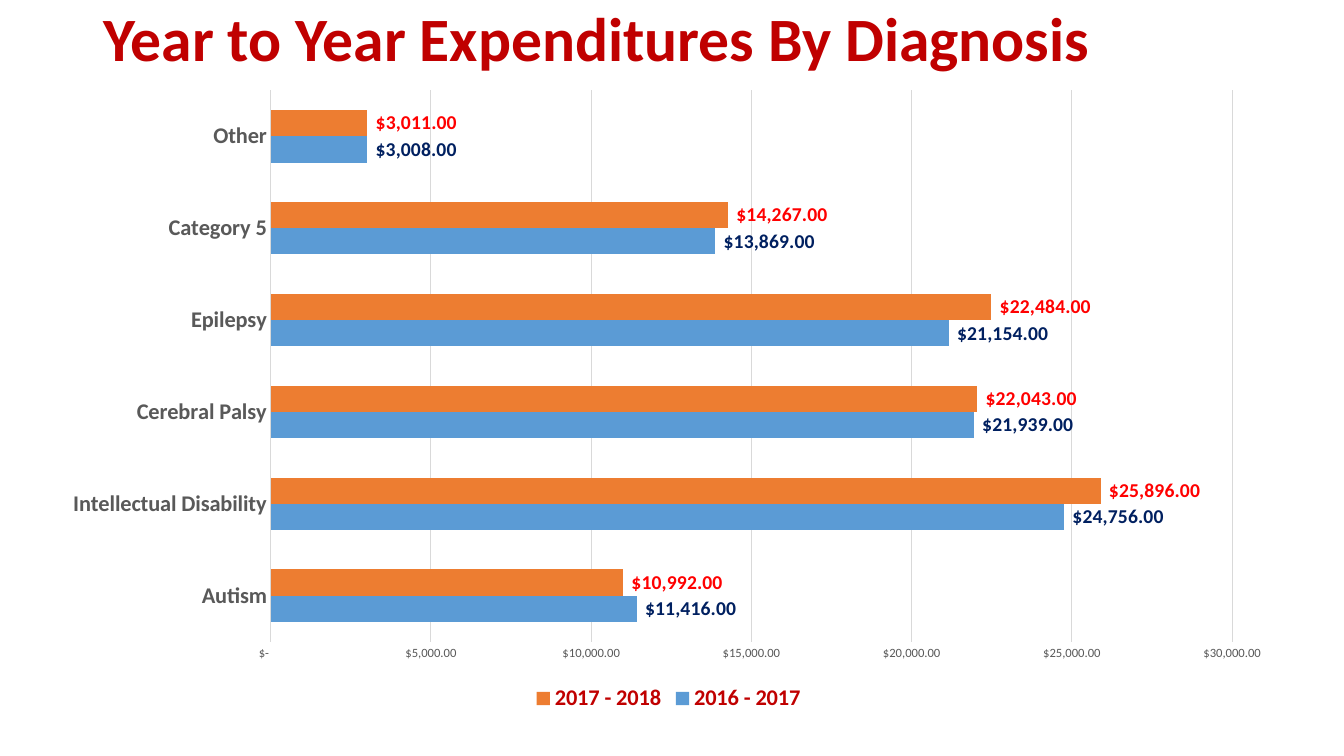
"""Build a slide with a bar chart of yearly expenditures by diagnosis."""
from dataclasses import dataclass

from pptx import Presentation
from pptx.chart.data import CategoryChartData
from pptx.dml.color import RGBColor
from pptx.enum.chart import (XL_CHART_TYPE, XL_LABEL_POSITION,
                             XL_LEGEND_POSITION, XL_TICK_MARK)
from pptx.enum.text import MSO_ANCHOR
from pptx.util import Inches, Pt

BARS = XL_CHART_TYPE.BAR_CLUSTERED
OUTSIDE = XL_LABEL_POSITION.OUTSIDE_END
BOTTOM = XL_LEGEND_POSITION.BOTTOM
NO_TICK = XL_TICK_MARK.NONE
MIDDLE = MSO_ANCHOR.MIDDLE


@dataclass(frozen=True)
class Theme:
    face: str = "Calibri"
    red: str = "C00000"
    gray: str = "595959"
    grid: str = "D9D9D9"
    black: str = "000000"
    title: int = 44
    large: int = 16
    label: int = 14
    base: int = 10
    small: int = 9
    fills: tuple = ("5B9BD5", "ED7D31")
    inks: tuple = ("002060", "FF0000")


theme = Theme()
MONEY = r'_("$"* #,##0.00_);_("$"* \(#,##0.00\);_("$"* "-"??_);_(@_)'


def style(font, size, color, bold=True):
    font.name = theme.face
    font.size = Pt(size)
    font.bold = bold
    font.color.rgb = RGBColor.from_string(color)


deck = Presentation()
deck.slide_width = Inches(13.33)
deck.slide_height = Inches(7.5)
slide = deck.slides.add_slide(deck.slide_layouts[6])

title = slide.shapes.add_textbox(Inches(0.93), Inches(0), Inches(11.5), Inches(0.83))
frame = title.text_frame
frame.word_wrap = True
frame.vertical_anchor = MIDDLE
frame.text = "Year to Year Expenditures By Diagnosis"
heading = frame.paragraphs[0]
heading.line_spacing = 0.9
style(heading.runs[0].font, theme.title, theme.red)

data = CategoryChartData(number_format=MONEY)
data.categories = ["Autism", "Intellectual Disability", "Cerebral Palsy",
                   "Epilepsy", "Category 5", "Other"]
data.add_series("2016 - 2017", [11416, 24756, 21939, 21154, 13869, 3008])
data.add_series("2017 - 2018", [10992, 25896, 22043, 22484, 14267, 3011])

chart = slide.shapes.add_chart(BARS, Inches(0.48), Inches(0.77),
                               Inches(12.3), Inches(6.34), data).chart
style(chart.font, theme.base, theme.black, False)
chart.has_title = False
chart.has_legend = True
chart.legend.position = BOTTOM
chart.legend.include_in_layout = False
style(chart.legend.font, theme.large, theme.red)

names, values = chart.category_axis, chart.value_axis
for axis in (names, values):
    axis.major_tick_mark = NO_TICK
    axis.minor_tick_mark = NO_TICK
    axis.format.line.fill.background()
style(names.tick_labels.font, theme.large, theme.gray)
style(values.tick_labels.font, theme.small, theme.gray, False)
values.tick_labels.number_format = MONEY
values.tick_labels.number_format_is_linked = False
values.has_major_gridlines = True
grid = values.major_gridlines.format.line
grid.width = Pt(0.75)
grid.color.rgb = RGBColor.from_string(theme.grid)

plot = chart.plots[0]
plot.gap_width = 150
plot.overlap = 0
plot.vary_by_categories = False
for series, fill, ink in zip(plot.series, theme.fills, theme.inks):
    series.format.fill.solid()
    series.format.fill.fore_color.rgb = RGBColor.from_string(fill)
    labels = series.data_labels
    labels.show_value = True
    labels.position = OUTSIDE
    labels.number_format = MONEY
    labels.number_format_is_linked = False
    style(labels.font, theme.label, ink)

deck.save("out.pptx")
